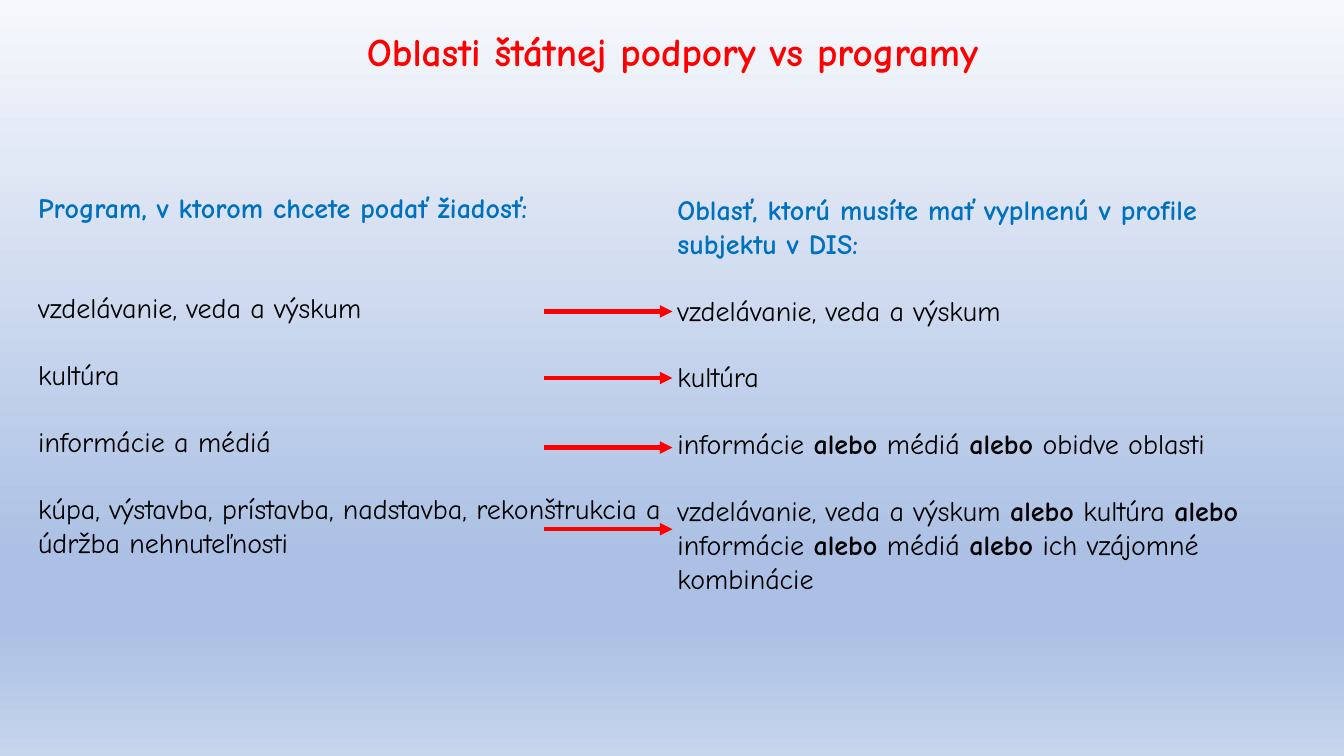
"""Build the slide that matches grant programmes to areas of state support."""
from lxml import etree
from pptx import Presentation
from pptx.dml.color import RGBColor
from pptx.enum.shapes import MSO_CONNECTOR
from pptx.enum.text import MSO_ANCHOR, PP_ALIGN
from pptx.oxml.ns import qn
from pptx.util import Inches, Pt

STRAIGHT = MSO_CONNECTOR.STRAIGHT
TOP = MSO_ANCHOR.TOP
CENTER = PP_ALIGN.CENTER

FONT = "Comic Neue"
RED, BLUE, BLACK = "FF0000", "0070C0", "000000"
BACKGROUND = [(0, "F6F8FC"), (74, "ABC0E4"), (83, "ABC0E4"), (100, "C7D5ED")]
TITLE = "Oblasti štátnej podpory vs programy"
BOLD_WORD = "alebo"
ROW_GAP = 23.8

COLUMNS = [
    {
        "box": (0.28, 1.84, 6.39, 4.14),
        "heading": "Program, v ktorom chcete podať žiadosť:",
        "heading_gap": 2 * ROW_GAP,
        "rows": [
            "vzdelávanie, veda a výskum",
            "kultúra",
            "informácie a médiá",
            "kúpa, výstavba, prístavba, nadstavba, rekonštrukcia a údržba nehnuteľnosti",
        ],
    },
    {
        "box": (6.62, 1.86, 6.39, 4.48),
        "heading": "Oblasť, ktorú musíte mať vyplnenú v profile subjektu v DIS:",
        "heading_gap": ROW_GAP,
        "rows": [
            "vzdelávanie, veda a výskum",
            "kultúra",
            "informácie alebo médiá alebo obidve oblasti",
            "vzdelávanie, veda a výskum alebo kultúra alebo "
            "informácie alebo médiá alebo ich vzájomné kombinácie",
        ],
    },
]
ARROW_LEFT, ARROW_RIGHT = 5.4, 6.67
ARROW_YS = [3.09, 3.75, 4.44, 5.25]


def rgb(color):
    return RGBColor.from_string(color)


def set_font(p, size, color, bold):
    p.font.name = FONT
    p.font.size = Pt(size)
    p.font.bold = bold
    p.font.color.rgb = rgb(color)


def set_background(s):
    fill = s.background.fill
    fill.gradient()
    fill.gradient_angle = 270
    stops = next(s.background._cSld.iter(qn("a:gsLst")))
    for stop in list(stops):
        stops.remove(stop)
    for percent, color in BACKGROUND:
        stop = etree.SubElement(stops, qn("a:gs"), pos=str(percent * 1000))
        etree.SubElement(stop, qn("a:srgbClr"), val=color)


def add_title(s):
    sp = s.shapes.title
    sp.left, sp.top, sp.width, sp.height = map(Inches, (2.88, 0.22, 7.58, 0.57))
    tf = sp.text_frame
    tf.vertical_anchor = TOP
    tf.text = TITLE
    p = tf.paragraphs[0]
    p.alignment = CENTER
    set_font(p, 28, RED, True)


def add_row(tf, text, gap):
    p = tf.add_paragraph()
    p.space_before = Pt(gap)
    set_font(p, 20, BLACK, False)
    for i, part in enumerate(text.split(BOLD_WORD)):
        if i:
            r = p.add_run()
            r.text = BOLD_WORD
            r.font.bold = True
        p.add_run().text = part


def add_column(s, column):
    tf = s.shapes.add_textbox(*map(Inches, column["box"])).text_frame
    tf.word_wrap = True
    tf.text = column["heading"]
    set_font(tf.paragraphs[0], 20, BLUE, True)
    for i, text in enumerate(column["rows"]):
        add_row(tf, text, ROW_GAP if i else column["heading_gap"])


def add_arrow(s, y):
    arrow = s.shapes.add_connector(
        STRAIGHT, Inches(ARROW_LEFT), Inches(y), Inches(ARROW_RIGHT), Inches(y))
    arrow.line.color.rgb = rgb(RED)
    arrow.line.width = Pt(3)
    etree.SubElement(arrow.line._get_or_add_ln(), qn("a:tailEnd"), type="triangle")
    etree.SubElement(arrow._element.spPr, qn("a:effectLst"))


def main():
    prs = Presentation()
    prs.slide_width, prs.slide_height = Inches(13.33), Inches(7.5)
    s = prs.slides.add_slide(prs.slide_layouts[5])
    set_background(s)
    add_title(s)
    for column in COLUMNS:
        add_column(s, column)
    for y in ARROW_YS:
        add_arrow(s, y)
    prs.save("out.pptx")


if __name__ == "__main__":
    main()
